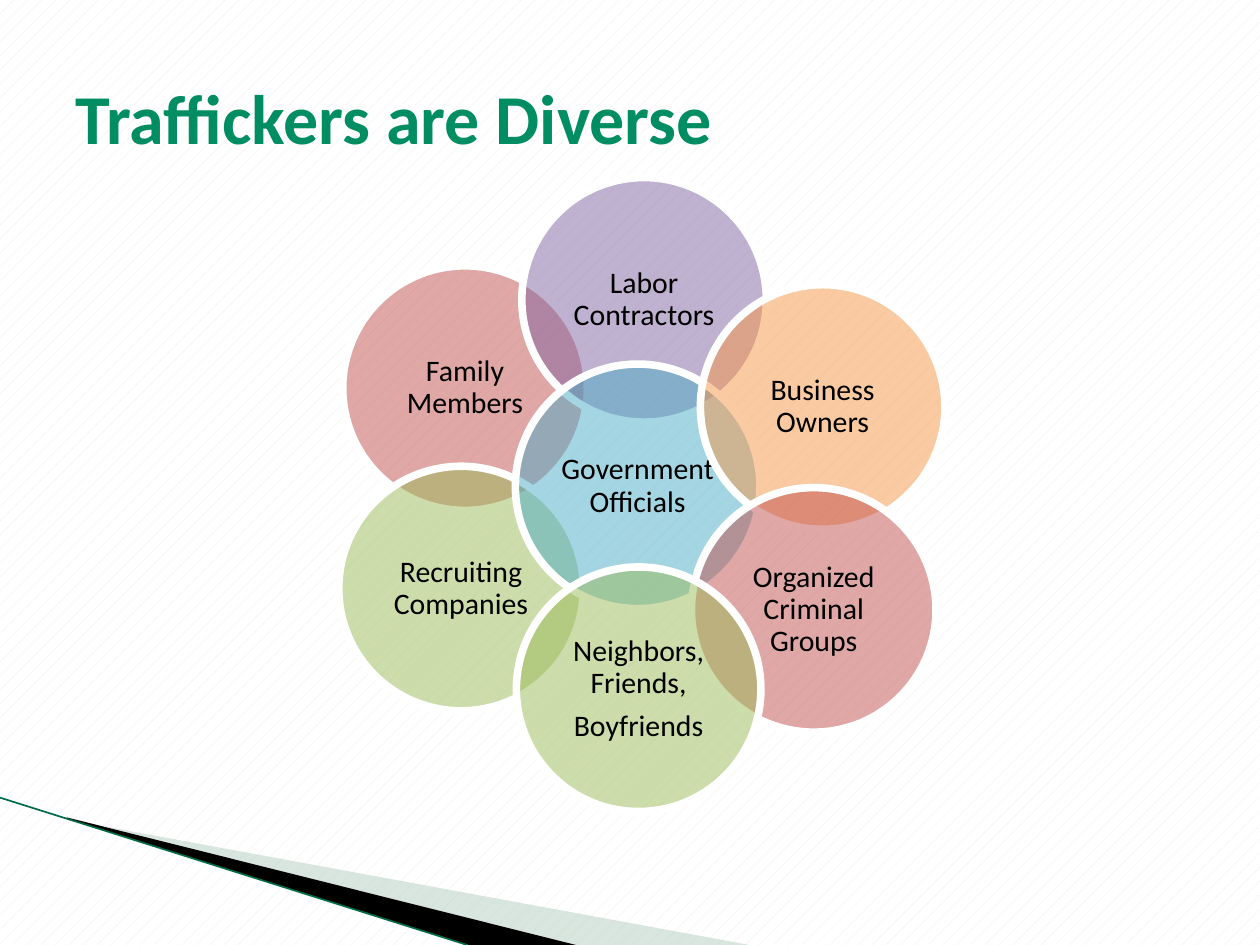
import lxml.etree
import pptx
import pptx.dml.color
import pptx.enum.dml
import pptx.enum.shapes
import pptx.enum.text
import pptx.oxml.ns
import pptx.util

Cm = pptx.util.Cm
Pt = pptx.util.Pt
qn = pptx.oxml.ns.qn

COLORS = {
    "white": "FFFFFF",
    "black": "000000",
    "cream": "EEECE1",
    "title": "008D61",
    "swoosh": "9FC2AF",
    "edge": "006B48",
    "red": "C0504D",
    "green": "9BBB59",
    "purple": "8064A2",
    "aqua": "4BACC6",
    "orange": "F79646",
}

CIRCLE_SIZE = 4.93
CIRCLES = [
    (6.91, 5.36, "red", ["Family Members"]),
    (6.83, 9.4, "green", ["Recruiting Companies"]),
    (10.52, 3.58, "purple", ["Labor Contractors"]),
    (10.39, 7.34, "aqua", ["Government Officials"]),
    (14.12, 5.74, "orange", ["Business Owners"]),
    (13.94, 9.83, "red", ["Organized Criminal Groups"]),
    (10.41, 11.43, "green", ["Neighbors, Friends,", "Boyfriends"]),
]


def rgb(name):
    return pptx.dml.color.RGBColor.from_string(COLORS[name])


class SlideBuilder:
    font_name = "Calibri"

    def __init__(self, slide):
        self.slide = slide

    def background(self):
        fill = self.slide.background.fill
        fill.patterned()
        fill.pattern = pptx.enum.dml.MSO_PATTERN.PERCENT_10
        fill.fore_color.rgb = rgb("cream")
        fill.back_color.rgb = rgb("white")

    def fill(self, shape, color, opacity=100):
        shape.shadow.inherit = False
        shape.fill.solid()
        shape.fill.fore_color.rgb = rgb(color)
        if opacity < 100:
            color_element = shape.fill._xPr.find(qn("a:solidFill"))[0]
            alpha = lxml.etree.SubElement(color_element, qn("a:alpha"))
            alpha.set("val", str(opacity * 1000))

    def style(self, paragraph, size, color, bold=False):
        paragraph.font.name = self.font_name
        paragraph.font.size = Pt(size)
        paragraph.font.bold = bold
        paragraph.font.color.rgb = rgb(color)

    def polygon(self, points, color, opacity=100):
        corners = [(Cm(x), Cm(y)) for x, y in points]
        builder = self.slide.shapes.build_freeform(*corners[0])
        builder.add_line_segments(corners[1:], close=True)
        shape = builder.convert_to_shape()
        self.fill(shape, color, opacity)
        shape.line.fill.background()

    def line(self, start, end, color, width):
        connector = self.slide.shapes.add_connector(
            pptx.enum.shapes.MSO_CONNECTOR.STRAIGHT,
            *(Cm(value) for value in start + end))
        connector.line.color.rgb = rgb(color)
        connector.line.width = Pt(width)
        lxml.etree.SubElement(connector._element.spPr, qn("a:effectLst"))

    def title(self, text):
        shape = self.slide.shapes.add_textbox(
            Cm(1.27), Cm(0.76), Cm(22.86), Cm(3.18))
        frame = shape.text_frame
        frame.word_wrap = True
        frame.vertical_anchor = pptx.enum.text.MSO_ANCHOR.MIDDLE
        frame.text = text
        self.style(frame.paragraphs[0], 40, "title", bold=True)

    def circle(self, left, top, color, lines):
        shape = self.slide.shapes.add_shape(
            pptx.enum.shapes.MSO_SHAPE.OVAL,
            Cm(left), Cm(top), Cm(CIRCLE_SIZE), Cm(CIRCLE_SIZE))
        self.fill(shape, color, opacity=50)
        shape.line.color.rgb = rgb("white")
        shape.line.width = Pt(4.33)
        frame = shape.text_frame
        frame.word_wrap = True
        frame.vertical_anchor = pptx.enum.text.MSO_ANCHOR.MIDDLE
        for side in ("left", "top", "right", "bottom"):
            setattr(frame, f"margin_{side}", Cm(0.17))
        frame.text = "\n".join(lines)
        for paragraph in frame.paragraphs:
            paragraph.alignment = pptx.enum.text.PP_ALIGN.CENTER
            paragraph.line_spacing = 0.9
            paragraph.space_after = Pt(6)
            self.style(paragraph, 17, "black")


def main():
    presentation = pptx.Presentation()
    presentation.slide_width = Cm(25.4)
    presentation.slide_height = Cm(19.05)
    slide = presentation.slides.add_slide(presentation.slide_layouts[6])
    builder = SlideBuilder(slide)
    builder.background()
    builder.polygon(
        [(1.4, 16.53), (15.11, 19.05), (11.58, 19.05), (1.4, 16.51)],
        "swoosh", opacity=40)
    builder.polygon(
        [(1.35, 16.48), (11.61, 19.05), (9.45, 19.05), (1.37, 16.51)],
        "black")
    builder.line((0, 16.08), (9.42, 19.05), "edge", 0.95)
    builder.title("Traffickers are Diverse")
    for circle in CIRCLES:
        builder.circle(*circle)
    presentation.save("out.pptx")


if __name__ == "__main__":
    main()
